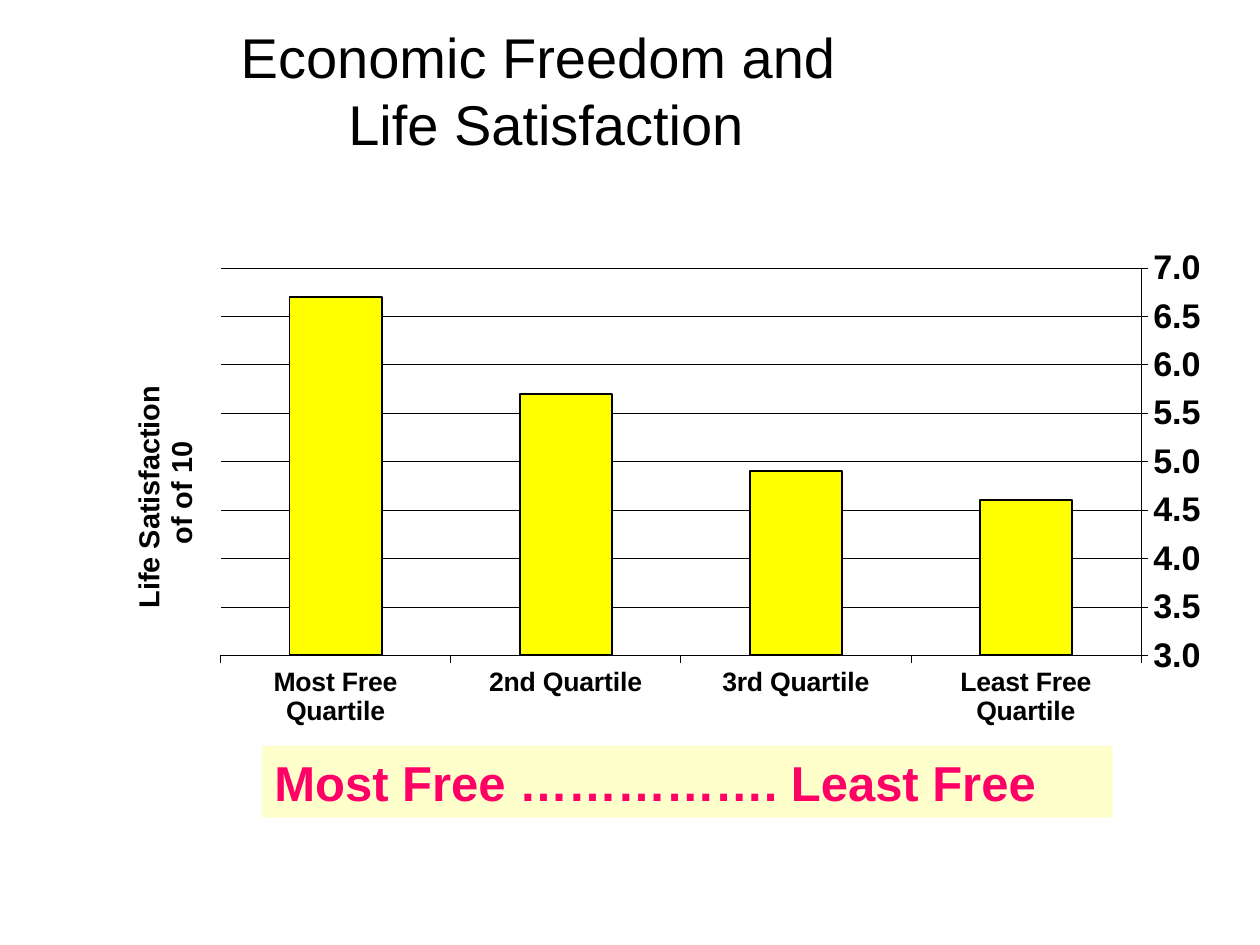
from lxml import etree
from pptx import Presentation
from pptx.chart.data import CategoryChartData
from pptx.dml.color import RGBColor
from pptx.enum.chart import XL_CHART_TYPE, XL_TICK_LABEL_POSITION, XL_TICK_MARK
from pptx.enum.shapes import MSO_SHAPE
from pptx.enum.text import MSO_ANCHOR, PP_ALIGN
from pptx.oxml.ns import qn
from pptx.util import Inches, Pt

COLUMN = XL_CHART_TYPE.COLUMN_CLUSTERED
LOW = XL_TICK_LABEL_POSITION.LOW
OUTSIDE = XL_TICK_MARK.OUTSIDE
NO_TICK = XL_TICK_MARK.NONE
RECTANGLE = MSO_SHAPE.RECTANGLE
MIDDLE, TOP = MSO_ANCHOR.MIDDLE, MSO_ANCHOR.TOP
CENTER, LEFT = PP_ALIGN.CENTER, PP_ALIGN.LEFT

FONT = "Arial"
BLACK, YELLOW, CREAM, PINK = "000000", "FFFF00", "FFFFCC", "FF0066"
HAIRLINE = 0.27
SATISFACTION = {
    "Least Free Quartile": 4.6,
    "3rd Quartile": 4.9,
    "2nd Quartile": 5.7,
    "Most Free Quartile": 6.7,
}


def rgb(value):
    return RGBColor.from_string(value)


def style_font(font, size, color=BLACK, bold=True):
    font.name = FONT
    font.size = Pt(size)
    font.bold = bold
    font.color.rgb = rgb(color)


def style_line(line, width):
    line.color.rgb = rgb(BLACK)
    line.width = Pt(width)


def add_lines(paragraph, lines, size, color=BLACK, bold=True):
    """Add one run per line, with line breaks between them."""
    for index, line in enumerate(lines):
        if index:
            paragraph.add_line_break()
        run = paragraph.add_run()
        run.text = line
        style_font(run.font, size, color, bold)


def set_layout(parent, x, y, width=None, height=None):
    """Place a chart part by fractions of the chart's size."""
    for old in parent.findall(qn("c:layout")):
        parent.remove(old)
    layout = etree.Element(qn("c:layout"))
    manual = etree.SubElement(layout, qn("c:manualLayout"))
    settings = {"xMode": "edge", "yMode": "edge", "x": x, "y": y}
    if width is not None:
        settings = {"layoutTarget": "inner", **settings, "w": width, "h": height}
    for name, value in settings.items():
        etree.SubElement(manual, qn(f"c:{name}")).set("val", str(value))
    text = parent.find(qn("c:tx"))
    parent.insert(0 if text is None else parent.index(text) + 1, layout)


def add_heading(slide):
    heading = slide.shapes.add_textbox(Inches(0.25), Inches(0), Inches(8.17), Inches(1.42))
    frame = heading.text_frame
    frame.word_wrap = True
    frame.vertical_anchor = MIDDLE
    paragraph = frame.paragraphs[0]
    paragraph.alignment = CENTER
    add_lines(paragraph, ["Economic Freedom and ", "Life Satisfaction"], 32, bold=False)


def style_axis(axis, size):
    axis.major_tick_mark = OUTSIDE
    axis.minor_tick_mark = NO_TICK
    style_font(axis.tick_labels.font, size)
    style_line(axis.format.line, HAIRLINE)


def style_value_axis(axis):
    style_axis(axis, 19.5)
    axis.minimum_scale, axis.maximum_scale, axis.major_unit = 3, 7, 0.5
    axis.tick_labels.number_format = "0.0"
    axis.tick_labels.number_format_is_linked = False
    axis.has_major_gridlines = True
    style_line(axis.major_gridlines.format.line, HAIRLINE)

    frame = axis.axis_title.text_frame
    add_lines(frame.paragraphs[0], ["Life Satisfaction ", "of of 10"], 16.5)
    body = frame.paragraphs[0]._p.getparent().find(qn("a:bodyPr"))
    body.set("rot", "-5400000")
    body.set("vert", "horz")
    set_layout(axis.axis_title._element, 0.05, 0.22)


def add_satisfaction_chart(slide):
    data = CategoryChartData(number_format="0.0")
    data.categories = list(SATISFACTION)
    data.add_series("Series 1", list(SATISFACTION.values()))
    chart = slide.shapes.add_chart(
        COLUMN, Inches(0.56), Inches(1.97), Inches(8.97), Inches(4.51), data
    ).chart
    chart.has_legend = False
    chart.has_title = False
    style_font(chart.font, 19.2)

    quartiles = chart.category_axis
    style_axis(quartiles, 15.2)
    quartiles.tick_label_position = LOW
    quartiles.reverse_order = True
    style_value_axis(chart.value_axis)

    plot = chart.plots[0]
    plot.gap_width = 150
    plot.vary_by_categories = False
    bars = plot.series[0].format
    bars.fill.solid()
    bars.fill.fore_color.rgb = rgb(YELLOW)
    style_line(bars.line, 1.07)
    plot_area = chart._chartSpace.chart.plotArea
    set_layout(plot_area, 0.133, 0.033, 0.816, 0.683)


def add_freedom_band(slide):
    band = slide.shapes.add_shape(
        RECTANGLE, Inches(2.08), Inches(5.92), Inches(6.75), Inches(0.57)
    )
    band.shadow.inherit = False
    band.fill.solid()
    band.fill.fore_color.rgb = rgb(CREAM)
    band.line.fill.background()
    frame = band.text_frame
    frame.word_wrap = True
    frame.vertical_anchor = TOP
    paragraph = frame.paragraphs[0]
    paragraph.alignment = LEFT
    add_lines(paragraph, ["Most Free ……………. Least Free"], 28, PINK)


def main():
    presentation = Presentation()
    presentation.slide_width = Inches(10)
    presentation.slide_height = Inches(7.5)
    slide = presentation.slides.add_slide(presentation.slide_layouts[6])
    add_heading(slide)
    add_satisfaction_chart(slide)
    add_freedom_band(slide)
    presentation.save("out.pptx")


if __name__ == "__main__":
    main()
